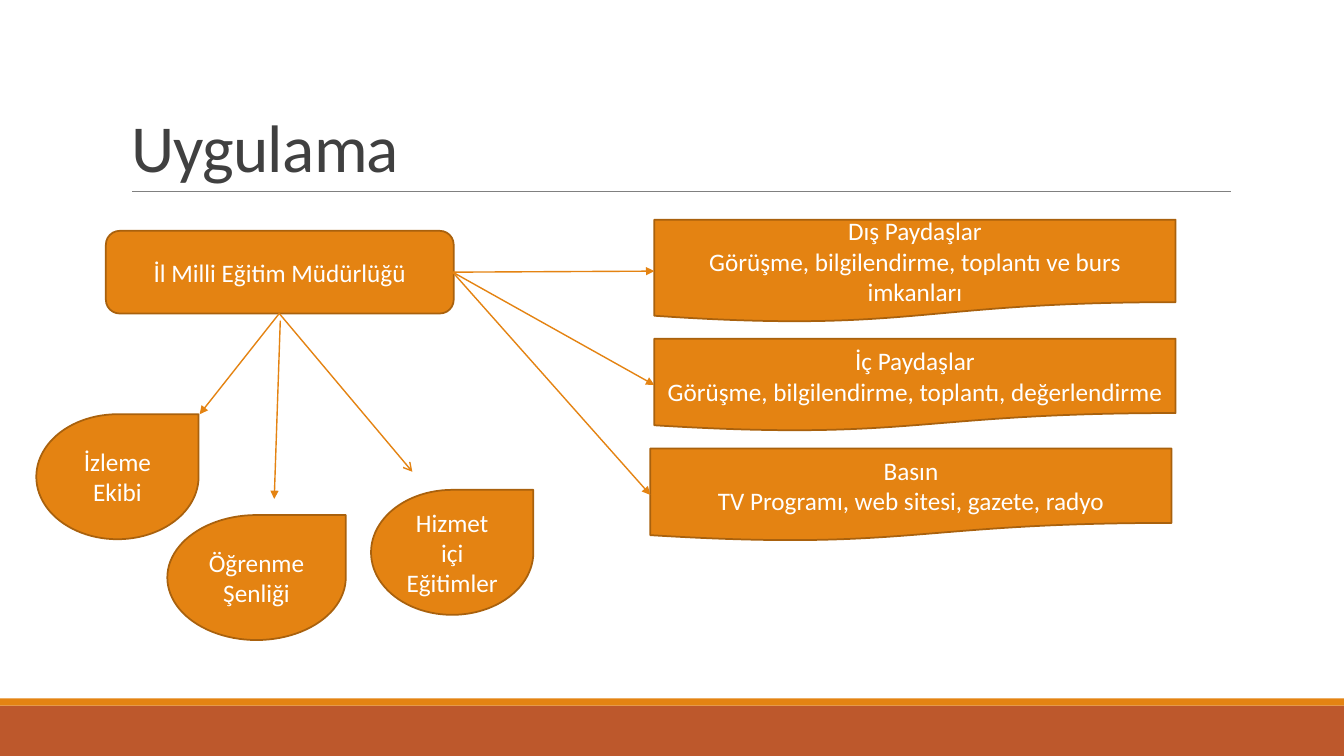
from pptx import Presentation
from pptx.dml.color import RGBColor
from pptx.enum.shapes import MSO_CONNECTOR as Connector, MSO_SHAPE as Shape
from pptx.enum.text import MSO_ANCHOR as Anchor, PP_ALIGN as Align
from pptx.oxml.ns import qn
from pptx.util import Inches, Pt
from lxml.etree import SubElement

FONT = "Calibri"
ORANGE = RGBColor(0xE4, 0x83, 0x12)
DARK_ORANGE = RGBColor(0xA9, 0x61, 0x0D)
RUST = RGBColor(0xBD, 0x58, 0x2C)
GRAY = RGBColor(0x80, 0x80, 0x80)
CHARCOAL = RGBColor(0x40, 0x40, 0x40)
WHITE = RGBColor(0xFF, 0xFF, 0xFF)

OFFICE_BOX = (1.05, 2.29, 3.45, 0.82)
OFFICE_RIGHT = (4.49, 2.7)
OFFICE_BOTTOM = (2.77, 3.11)

STAKEHOLDERS = [
    ((6.49, 2.18, 5.17, 1.02), (6.49, 2.69),
     ["Dış Paydaşlar", "Görüşme, bilgilendirme, toplantı ve burs imkanları"]),
    ((6.49, 3.36, 5.17, 0.92), (6.49, 3.82),
     ["İç Paydaşlar", "Görüşme, bilgilendirme, toplantı, değerlendirme"]),
    ((6.45, 4.45, 5.17, 0.92), (6.45, 4.91),
     ["Basın", "TV Programı, web sitesi, gazete, radyo"]),
]

ACTIVITIES = [
    ((0.36, 4.11, 1.61, 1.24), OFFICE_BOTTOM, (1.98, 4.11), "triangle", "İzleme Ekibi"),
    ((1.66, 5.11, 1.77, 1.24), (2.78, 3.18), (2.72, 4.95), "triangle", "Öğrenme Şenliği"),
    ((3.68, 4.86, 1.61, 1.24), OFFICE_BOTTOM, (4.09, 4.68), "arrow", "Hizmet içi Eğitimler"),
]


def add_run(paragraph, text, size, color):
    run = paragraph.add_run()
    run.text = text
    run.font.name = FONT
    run.font.size = Pt(size)
    run.font.color.rgb = color
    return run


def add_filled_shape(slide, kind, box, fill):
    shape = slide.shapes.add_shape(kind, *map(Inches, box))
    shape.shadow.inherit = False
    shape.fill.solid()
    shape.fill.fore_color.rgb = fill
    shape.line.fill.background()
    return shape


def add_node(slide, kind, box, lines):
    shape = add_filled_shape(slide, kind, box, ORANGE)
    shape.line.color.rgb = DARK_ORANGE
    shape.line.width = Pt(1.25)
    frame = shape.text_frame
    frame.word_wrap = True
    frame.vertical_anchor = Anchor.MIDDLE
    for index, text in enumerate(lines):
        paragraph = frame.add_paragraph() if index else frame.paragraphs[0]
        paragraph.alignment = Align.CENTER
        add_run(paragraph, text, 18, WHITE)


def add_line(slide, start, end, color, width):
    line = slide.shapes.add_connector(Connector.STRAIGHT, *map(Inches, start + end))
    line.line.color.rgb = color
    line.line.width = Pt(width)
    SubElement(line._element.spPr, qn("a:effectLst"))
    return line


def add_arrow(slide, start, end, head="triangle"):
    arrow = add_line(slide, start, end, ORANGE, 1)
    SubElement(arrow.line._get_or_add_ln(), qn("a:tailEnd"), type=head)


def set_title(slide, text):
    title = slide.shapes.title
    title.left, title.top, title.width, title.height = map(Inches, (1.2, 0.31, 11, 1.59))
    title.text_frame.vertical_anchor = Anchor.BOTTOM
    paragraph = title.text_frame.paragraphs[0]
    paragraph.alignment = Align.LEFT
    paragraph.line_spacing = 0.85
    run = add_run(paragraph, text, 48, CHARCOAL)
    run.font._element.set("spc", "-50")


def main():
    presentation = Presentation()
    presentation.slide_width = Inches(13.33)
    presentation.slide_height = Inches(7.5)
    slide = presentation.slides.add_slide(presentation.slide_layouts[5])

    add_filled_shape(slide, Shape.RECTANGLE, (0, 7, 13.33, 0.5), RUST)
    add_filled_shape(slide, Shape.RECTANGLE, (0, 6.93, 13.33, 0.07), ORANGE)
    add_line(slide, (1.31, 1.9), (12.21, 1.9), GRAY, 0.5)
    set_title(slide, "Uygulama")

    add_node(slide, Shape.ROUNDED_RECTANGLE, OFFICE_BOX, ["İl Milli Eğitim Müdürlüğü"])
    for box, target, lines in STAKEHOLDERS:
        add_node(slide, Shape.FLOWCHART_DOCUMENT, box, lines)
        add_arrow(slide, OFFICE_RIGHT, target)
    for box, start, end, head, text in ACTIVITIES:
        add_node(slide, Shape.TEAR, box, [text])
        add_arrow(slide, start, end, head)

    presentation.save("out.pptx")


if __name__ == "__main__":
    main()
